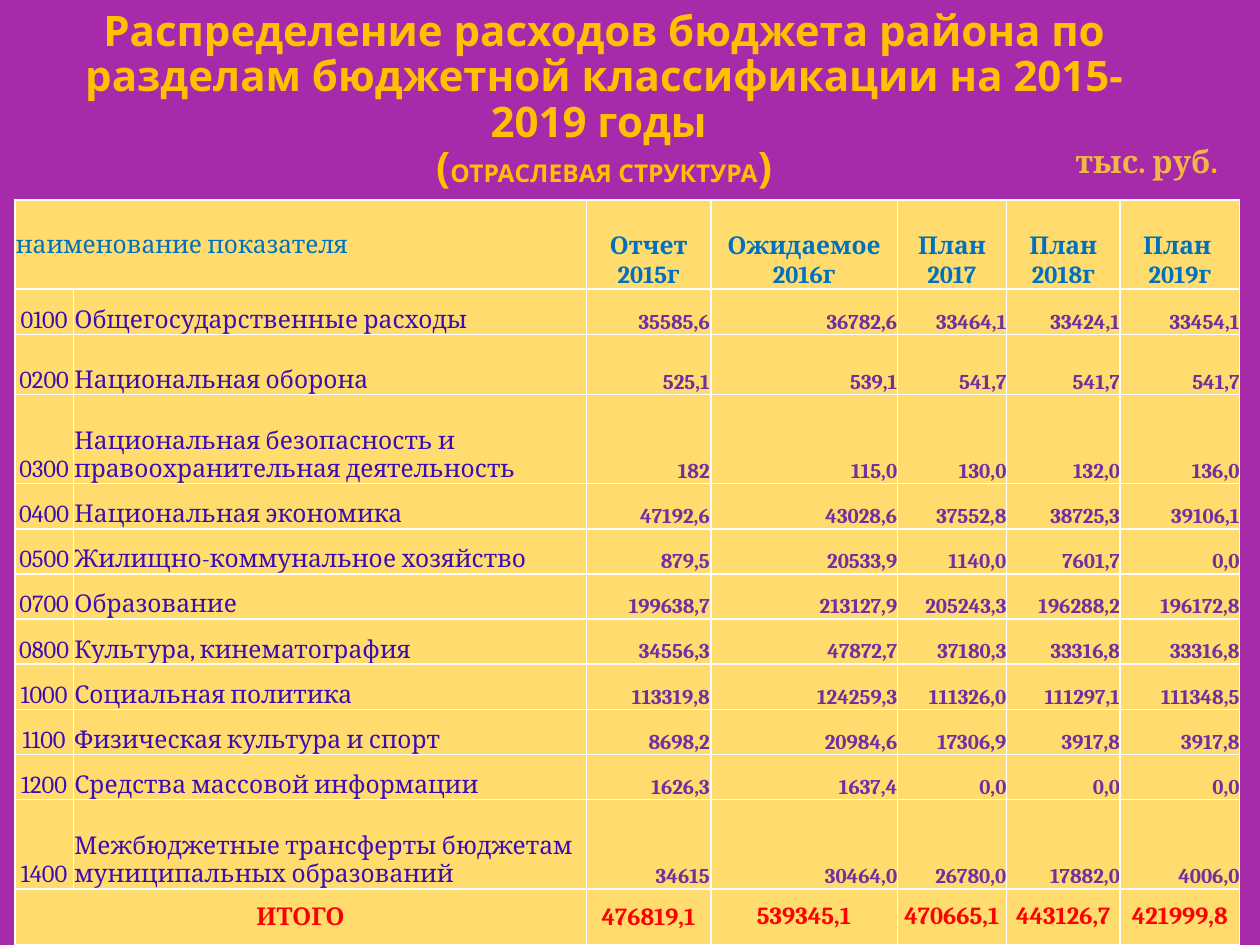
from lxml import etree
from pptx import Presentation
from pptx.dml.color import RGBColor
from pptx.enum.text import MSO_ANCHOR, MSO_AUTO_SIZE, PP_ALIGN
from pptx.oxml.ns import qn
from pptx.util import Cm, Pt

LEFT, CENTER, RIGHT = PP_ALIGN.LEFT, PP_ALIGN.CENTER, PP_ALIGN.RIGHT
MIDDLE, BOTTOM = MSO_ANCHOR.MIDDLE, MSO_ANCHOR.BOTTOM

COLORS = {
    "page": "A62AA9", "title": "FFC000", "unit": "F0B744", "cell": "FFDC6D",
    "border": "FFFFFF", "header": "0070C0", "name": "3C0DB3",
    "value": "7030A0", "total": "FF0000",
}
TITLE_FONT, BODY_FONT = "Open Sans", "Cambria"

# Content
TITLE = [
    ("Распределение расходов бюджета района по разделам бюджетной "
     "классификации на 2015-2019 годы \v(", 24),
    ("ОТРАСЛЕВАЯ СТРУКТУРА", 14),
    (")", 24),
]
UNIT = [("тыс. руб", "unit"), (".", "title")]
HEADER = ["наименование показателя", "", "Отчет 2015г", "Ожидаемое 2016г",
          "План 2017", "План 2018г", "План \n2019г"]
SECTIONS = [
    ["0100", "Общегосударственные расходы",
     "35585,6", "36782,6", "33464,1", "33424,1", "33454,1"],
    ["0200", "Национальная оборона",
     "525,1", "539,1", "541,7", "541,7", "541,7"],
    ["0300", "Национальная безопасность и правоохранительная деятельность",
     "182", "115,0", "130,0", "132,0", "136,0"],
    ["0400", "Национальная экономика",
     "47192,6", "43028,6", "37552,8", "38725,3", "39106,1"],
    ["0500", "Жилищно-коммунальное хозяйство",
     "879,5", "20533,9", "1140,0", "7601,7", "0,0"],
    ["0700", "Образование",
     "199638,7", "213127,9", "205243,3", "196288,2", "196172,8"],
    ["0800", "Культура, кинематография",
     "34556,3", "47872,7", "37180,3", "33316,8", "33316,8"],
    ["1000", "Социальная политика",
     "113319,8", "124259,3", "111326,0", "111297,1", "111348,5"],
    ["1100", "Физическая культура и спорт",
     "8698,2", "20984,6", "17306,9", "3917,8", "3917,8"],
    ["1200", "Средства массовой информации",
     "1626,3", "1637,4", "0,0", "0,0", "0,0"],
    ["1400", "Межбюджетные трансферты бюджетам муниципальных образований",
     "34615", "30464,0", "26780,0", "17882,0", "4006,0"],
]
TOTAL = ["ИТОГО", "", "476819,1", "539345,1", "470665,1", "443126,7", "421999,8"]
ROWS = [HEADER, *SECTIONS, TOTAL]
LAST = len(ROWS) - 1

# Table grid, in centimetres
COLUMN_WIDTHS = [1.18, 10.34, 2.51, 3.76, 2.2, 2.29, 2.41]
ROW_HEIGHT = 0.91
SPECIAL_HEIGHTS = {0: 1.8, 2: 1.21, 3: 1.8, 11: 1.8, LAST: 1.12}
ROW_HEIGHTS = [SPECIAL_HEIGHTS.get(i, ROW_HEIGHT) for i in range(len(ROWS))]


def add_run(para, text, font, size, color, bold):
    span = para.add_run()
    span.text = text
    span.font.name = font
    span.font.size = Pt(size)
    span.font.bold = bold
    span.font.color.rgb = RGBColor.from_string(COLORS[color])


def cell_style(row, column):
    """Return colour, size, bold, alignment and anchor for a cell."""
    if row == 0:
        if column == 0:
            return "header", 14, False, LEFT, MIDDLE
        return "header", 14, True, CENTER, BOTTOM
    if row == LAST:
        return "total", 14, True, CENTER, MIDDLE
    if column < 2:
        return "name", 14, False, LEFT if column else CENTER, BOTTOM
    return "value", 12, True, RIGHT, BOTTOM


def add_borders(cell):
    properties = cell._tc.get_or_add_tcPr()
    for place, side in enumerate(("a:lnL", "a:lnR", "a:lnT", "a:lnB")):
        line = etree.Element(qn(side), w=str(Pt(1)))
        fill = etree.SubElement(line, qn("a:solidFill"))
        etree.SubElement(fill, qn("a:srgbClr"), val=COLORS["border"])
        properties.insert(place, line)


def fill_cell(cell, row, column, text):
    color, size, bold, align, anchor = cell_style(row, column)
    cell.fill.solid()
    cell.fill.fore_color.rgb = RGBColor.from_string(COLORS["cell"])
    add_borders(cell)
    cell.vertical_anchor = anchor
    inset = Cm(0.02) if row == 0 or column < 3 else 0
    cell.margin_left = cell.margin_right = cell.margin_top = inset
    cell.margin_bottom = 0
    if not text:
        return
    for number, line in enumerate(text.split("\n")):
        frame = cell.text_frame
        para = frame.add_paragraph() if number else frame.paragraphs[0]
        para.alignment = align
        add_run(para, line, BODY_FONT, size, color, bold)


def add_title(page):
    box = page.shapes.title
    box.left, box.top, box.width, box.height = Cm(0.71), Cm(0.33), Cm(22.94), Cm(3.4)
    frame = box.text_frame
    frame.word_wrap = True
    frame.auto_size = MSO_AUTO_SIZE.NONE
    frame.vertical_anchor = MIDDLE
    para = frame.paragraphs[0]
    para.alignment = CENTER
    para.line_spacing = 0.9
    for text, size in TITLE:
        for number, part in enumerate(text.split("\v")):
            if number:
                para.add_line_break()
            add_run(para, part, TITLE_FONT, size, "title", True)


def add_budget_table(page):
    table = page.shapes.add_table(
        len(ROWS), len(COLUMN_WIDTHS), Cm(0.3), Cm(4.03),
        Cm(sum(COLUMN_WIDTHS)), Cm(sum(ROW_HEIGHTS))).table
    for column, width in zip(table.columns, COLUMN_WIDTHS):
        column.width = Cm(width)
    for row, height in zip(table.rows, ROW_HEIGHTS):
        row.height = Cm(height)
    for row in (0, LAST):
        table.cell(row, 0).merge(table.cell(row, 1))
    for row, texts in enumerate(ROWS):
        for column, text in enumerate(texts):
            fill_cell(table.cell(row, column), row, column, text)


def add_unit_label(page):
    box = page.shapes.add_textbox(Cm(21.31), Cm(2.51), Cm(3.61), Cm(1.47))
    frame = box.text_frame
    frame.word_wrap = True
    frame.vertical_anchor = MIDDLE
    para = frame.paragraphs[0]
    para.alignment = CENTER
    for text, color in UNIT:
        add_run(para, text, BODY_FONT, 18, color, True)


def main():
    deck = Presentation()
    deck.slide_width, deck.slide_height = Cm(25.4), Cm(19.05)
    page = deck.slides.add_slide(deck.slide_layouts[5])
    page.background.fill.solid()
    page.background.fill.fore_color.rgb = RGBColor.from_string(COLORS["page"])
    add_title(page)
    add_budget_table(page)
    add_unit_label(page)
    deck.save("out.pptx")


if __name__ == "__main__":
    main()
